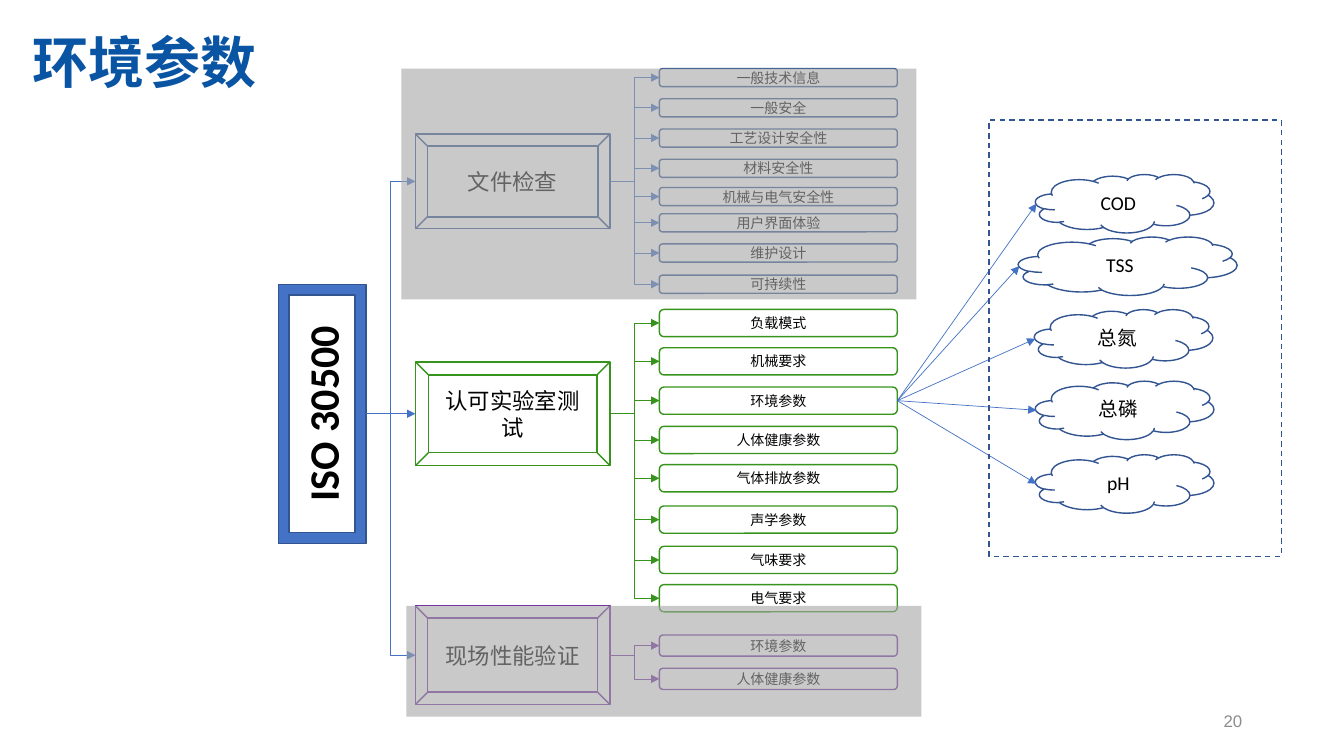
from dataclasses import dataclass

from lxml import etree
from pptx import Presentation
from pptx.dml.color import RGBColor
from pptx.enum.dml import MSO_LINE
from pptx.enum.shapes import MSO_CONNECTOR, MSO_SHAPE
from pptx.enum.text import MSO_ANCHOR, PP_ALIGN
from pptx.oxml.ns import qn
from pptx.shapes.autoshape import Shape
from pptx.shapes.connector import Connector
from pptx.slide import Slide
from pptx.util import Inches, Pt

BEVEL, CLOUD, FRAME = MSO_SHAPE.BEVEL, MSO_SHAPE.CLOUD, MSO_SHAPE.FRAME
RECTANGLE, ROUNDED = MSO_SHAPE.RECTANGLE, MSO_SHAPE.ROUNDED_RECTANGLE
ELBOW, STRAIGHT = MSO_CONNECTOR.ELBOW, MSO_CONNECTOR.STRAIGHT
CENTER, LEFT, RIGHT = PP_ALIGN.CENTER, PP_ALIGN.LEFT, PP_ALIGN.RIGHT
MIDDLE, DASH = MSO_ANCHOR.MIDDLE, MSO_LINE.DASH
RIGHT_SIDE = 3


@dataclass(frozen=True)
class Theme:
    title_color: str = "0A55A3"
    blue: str = "4472C4"
    navy: str = "325491"
    green: str = "36941C"
    purple: str = "7030A0"
    black: str = "000000"
    veil: str = "A5A5A5"
    number_color: str = "8C8C8C"
    heading_font: str = "Arial"
    body_font: str = "Calibri"
    title_size: int = 40
    standard_size: int = 30
    stage_size: int = 16
    cloud_size: int = 14
    number_size: int = 12
    item_size: int = 10
    outline: float = 1
    link: float = 0.5


THEME = Theme()


@dataclass(frozen=True)
class Box:
    left: float
    top: float
    width: float
    height: float

    @property
    def middle(self) -> float:
        return self.top + self.height / 2

    @property
    def right(self) -> float:
        return self.left + self.width

    def lengths(self) -> tuple[int, int, int, int]:
        return Inches(self.left), Inches(self.top), Inches(self.width), Inches(self.height)


@dataclass(frozen=True)
class Stage:
    text: str
    box: Box
    color: str
    link_color: str
    item_height: float
    items: dict[str, float]  # item text to top


@dataclass(frozen=True)
class Cloud:
    text: str
    box: Box


STAGES = [
    Stage("文件检查", Box(4.12, 1.33, 1.93, 0.94), THEME.navy, THEME.blue, 0.18,
          {"一般技术信息": 0.68, "一般安全": 0.98, "工艺设计安全性": 1.28, "材料安全性": 1.58,
           "机械与电气安全性": 1.86, "用户界面体验": 2.12, "维护设计": 2.42, "可持续性": 2.73}),
    Stage("认可实验室测试", Box(4.12, 3.59, 1.93, 1.03), THEME.green, THEME.green, 0.27,
          {"负载模式": 3.07, "机械要求": 3.45, "环境参数": 3.84, "人体健康参数": 4.23,
           "气体排放参数": 4.61, "声学参数": 5.02, "气味要求": 5.42, "电气要求": 5.8}),
    Stage("现场性能验证", Box(4.12, 6.01, 1.93, 0.98), THEME.purple, THEME.purple, 0.21,
          {"环境参数": 6.3, "人体健康参数": 6.63}),
]
EXPANDED_ITEM = (STAGES[1], "环境参数")
ITEM_LEFT, ITEM_WIDTH = 6.54, 2.36
CLOUDS = [
    Cloud("COD", Box(10.27, 1.73, 1.77, 0.58)),
    Cloud("TSS", Box(10.1, 2.35, 2.17, 0.58)),
    Cloud("总氮", Box(10.26, 3.07, 1.77, 0.58)),
    Cloud("总磷", Box(10.27, 3.78, 1.77, 0.58)),
    Cloud("pH", Box(10.27, 4.51, 1.77, 0.58)),
]
STANDARD = Box(2.76, 2.82, 0.87, 2.57)
CLOUD_AREA = Box(9.81, 1.19, 2.9, 4.33)
VEILS = [Box(3.98, 0.68, 5.11, 2.29), Box(4.03, 6.01, 5.11, 1.1)]


def write(shape: Shape, text: str, size: int, color: str, font_name: str,
          alignment: PP_ALIGN = CENTER, bold: bool = False) -> None:
    frame = shape.text_frame
    frame.word_wrap = True
    frame.vertical_anchor = MIDDLE
    paragraph = frame.paragraphs[0]
    paragraph.text = text
    paragraph.alignment = alignment
    font = paragraph.font
    font.name, font.size, font.bold = font_name, Pt(size), bold
    font.color.rgb = RGBColor.from_string(color)


def add_outline(slide: Slide, kind: MSO_SHAPE, box: Box, color: str) -> Shape:
    shape = slide.shapes.add_shape(kind, *box.lengths())
    shape.shadow.inherit = False
    shape.fill.background()
    shape.line.color.rgb = RGBColor.from_string(color)
    shape.line.width = Pt(THEME.outline)
    return shape


def add_label(slide: Slide, kind: MSO_SHAPE, box: Box, color: str, text: str, size: int) -> Shape:
    shape = add_outline(slide, kind, box, color)
    write(shape, text, size, THEME.black, THEME.body_font)
    return shape


def add_arrow(slide: Slide, kind: MSO_CONNECTOR, start: tuple[float, float],
              end: tuple[float, float], color: str) -> Connector:
    points = [Inches(value) for value in (*start, *end)]
    arrow = slide.shapes.add_connector(kind, *points)
    arrow.line.color.rgb = RGBColor.from_string(color)
    arrow.line.width = Pt(THEME.link)
    etree.SubElement(arrow.line._get_or_add_ln(), qn("a:tailEnd"), type="triangle")
    etree.SubElement(arrow._element.spPr, qn("a:effectLst"))
    return arrow


def add_standard(slide: Slide) -> Shape:
    shape = add_outline(slide, FRAME, STANDARD, THEME.navy)
    shape.fill.solid()
    shape.fill.fore_color.rgb = RGBColor.from_string(THEME.blue)
    write(shape, "ISO 30500", THEME.standard_size, THEME.black, THEME.body_font, bold=True)
    shape.text_frame._txBody.bodyPr.set("vert", "vert270")
    return shape


def add_stage(slide: Slide, stage: Stage, standard: Shape) -> dict[str, Shape]:
    """Draw a stage with its links and return its item shapes by text."""
    box = stage.box
    add_label(slide, BEVEL, box, stage.color, stage.text, THEME.stage_size)
    level = abs(box.middle - STANDARD.middle) < 0.01
    arrow = add_arrow(slide, STRAIGHT if level else ELBOW, (STANDARD.right, STANDARD.middle),
                      (box.left, box.middle), THEME.blue)
    if level:
        arrow.begin_connect(standard, RIGHT_SIDE)
    item_shapes = {}
    for text, top in stage.items.items():
        item = Box(ITEM_LEFT, top, ITEM_WIDTH, stage.item_height)
        add_arrow(slide, ELBOW, (box.right, box.middle), (item.left, item.middle),
                  stage.link_color)
        item_shapes[text] = add_label(slide, ROUNDED, item, stage.color, text, THEME.item_size)
    return item_shapes


def add_cloud(slide: Slide, cloud: Cloud, source: Shape) -> None:
    box = cloud.box
    add_label(slide, CLOUD, box, THEME.navy, cloud.text, THEME.cloud_size)
    arrow = add_arrow(slide, STRAIGHT, (ITEM_LEFT + ITEM_WIDTH, STANDARD.middle),
                      (box.left + 0.01, box.middle), THEME.blue)
    arrow.begin_connect(source, RIGHT_SIDE)


def add_veil(slide: Slide, box: Box) -> None:
    """Cover an area with a translucent grey rectangle."""
    shape = add_outline(slide, RECTANGLE, box, THEME.veil)
    shape.line.fill.background()
    shape.fill.solid()
    shape.fill.fore_color.rgb = RGBColor.from_string(THEME.veil)
    color = shape._element.spPr.find(qn("a:solidFill"))[0]
    etree.SubElement(color, qn("a:alpha"), val="60000")


def main() -> None:
    presentation = Presentation()
    presentation.slide_width, presentation.slide_height = Inches(13.33), Inches(7.5)
    slide = presentation.slides.add_slide(presentation.slide_layouts[6])

    title = slide.shapes.add_textbox(*Box(0.32, 0.15, 12.24, 0.99).lengths())
    write(title, "环境参数", THEME.title_size, THEME.title_color, THEME.heading_font, LEFT, True)
    frame = title.text_frame
    frame.margin_left = frame.margin_right = frame.margin_top = frame.margin_bottom = 0
    frame.paragraphs[0].line_spacing = 0.9

    standard = add_standard(slide)
    item_shapes = {stage.text: add_stage(slide, stage, standard) for stage in STAGES}
    expanded_stage, expanded_text = EXPANDED_ITEM
    for cloud in CLOUDS:
        add_cloud(slide, cloud, item_shapes[expanded_stage.text][expanded_text])
    add_outline(slide, RECTANGLE, CLOUD_AREA, THEME.navy).line.dash_style = DASH

    number = slide.shapes.add_textbox(*Box(9.42, 6.95, 3, 0.4).lengths())
    write(number, "20", THEME.number_size, THEME.number_color, THEME.heading_font, RIGHT)
    for box in VEILS:
        add_veil(slide, box)
    presentation.save("out.pptx")


if __name__ == "__main__":
    main()
